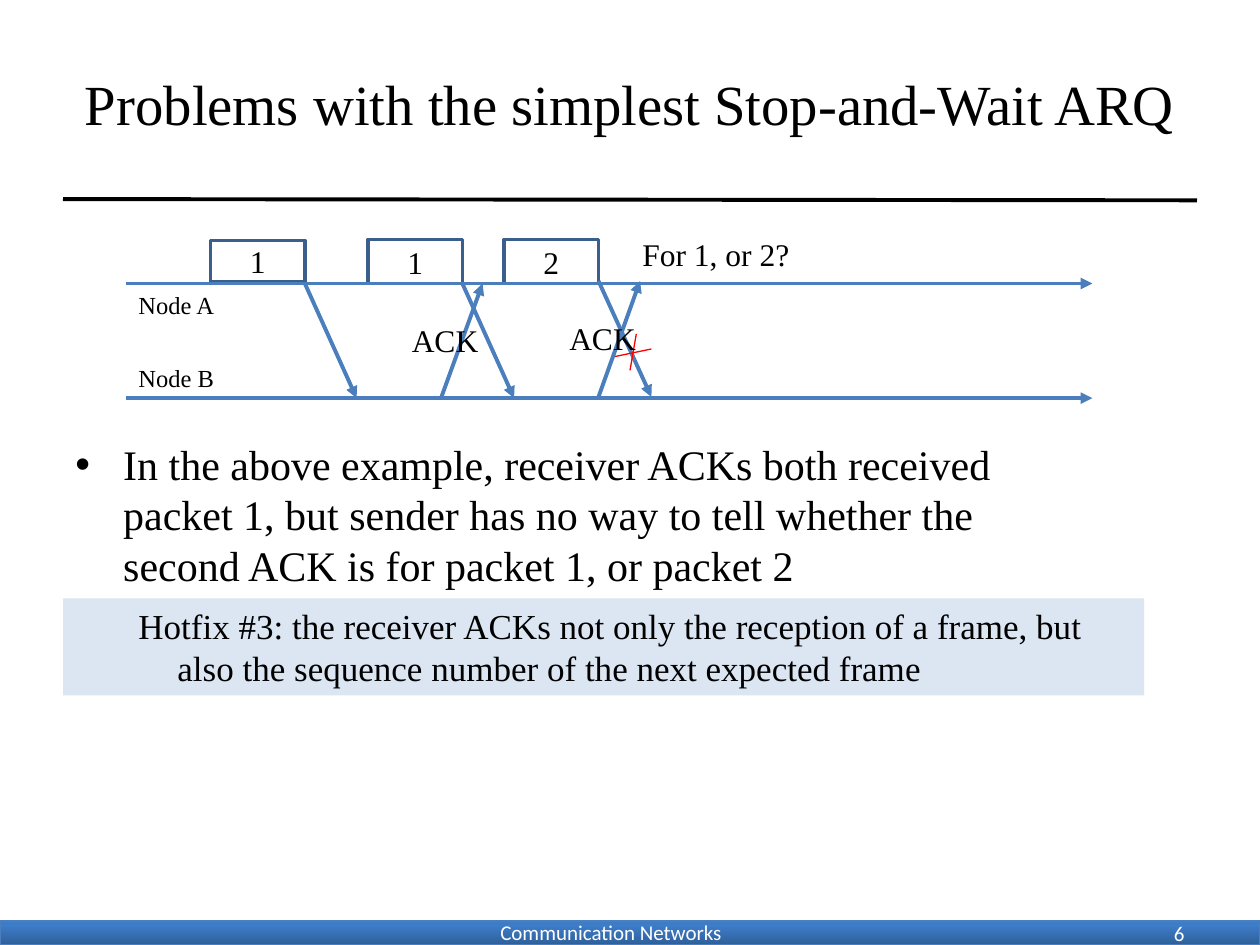
from dataclasses import dataclass
from typing import NamedTuple

from lxml.etree import SubElement
from pptx import Presentation
from pptx.dml.color import RGBColor
from pptx.enum.shapes import MSO_CONNECTOR, MSO_SHAPE
from pptx.enum.text import MSO_ANCHOR, PP_ALIGN
from pptx.oxml.ns import qn
from pptx.util import Inches, Pt


@dataclass(frozen=True)
class Theme:
    black: str = "000000"
    white: str = "FFFFFF"
    red: str = "FF0000"
    blue: str = "4B7EBC"
    frame_border: str = "3A5F8C"
    highlight: str = "DCE6F2"
    bar_dark: str = "2F5F99"
    bar_light: str = "3D7CC7"
    font: str = "Times New Roman"
    footer_font: str = "Calibri"
    title_size: float = 32.4
    body_size: float = 24
    hotfix_size: float = 20
    label_size: float = 18
    node_size: float = 14
    footer_size: float = 12


THEME = Theme()


class Box(NamedTuple):
    left: float
    top: float
    width: float
    height: float


class Frame(NamedTuple):
    number: str
    box: Box


class Label(NamedTuple):
    text: str
    box: Box
    size: float


class Line(NamedTuple):
    start: tuple[float, float]
    end: tuple[float, float]
    color: str = THEME.blue
    width: float = 2.25
    arrow: bool = True


TIME_A, TIME_B = 2.25, 3.16
FRAMES = [
    Frame("1", Box(1.67, 1.91, 0.75, 0.33)),
    Frame("1", Box(2.92, 1.9, 0.75, 0.35)),
    Frame("2", Box(4, 1.9, 0.75, 0.35)),
]
LINES = [
    Line((1, TIME_A), (8.67, TIME_A)),
    Line((1, TIME_B), (8.67, TIME_B)),
    Line((2.42, TIME_A), (2.83, TIME_B)),
    Line((3.5, TIME_B), (3.83, TIME_A)),
    Line((3.67, TIME_A), (4.08, TIME_B)),
    Line((4.75, 2.23), (5.17, 3.15)),
    Line((4.75, 3.15), (5.08, 2.23)),
    Line((5.05, 2.65), (5, 2.94), THEME.red, 0.75, False),
    Line((5.17, 2.77), (4.88, 2.83), THEME.red, 0.75, False),
]
LABELS = [
    Label("Node A", Box(1, 2.25, 0.81, 0.34), THEME.node_size),
    Label("Node B", Box(1, 2.83, 0.81, 0.34), THEME.node_size),
    Label("ACK", Box(3.17, 2.5, 0.73, 0.4), THEME.label_size),
    Label("ACK", Box(4.42, 2.48, 0.73, 0.4), THEME.label_size),
    Label("For 1, or 2?", Box(5, 1.82, 1.38, 0.4), THEME.label_size),
]


def rgb(color: str) -> RGBColor:
    return RGBColor.from_string(color)


def inches(box: Box) -> list[Inches]:
    return [Inches(value) for value in box]


def write(shape, text: str, size: float, color: str = THEME.black, font: str = THEME.font,
          align: PP_ALIGN = PP_ALIGN.LEFT, wrap: bool = True):
    """Set a shape's text in one style and return its paragraph."""
    shape.text_frame.text = text
    shape.text_frame.word_wrap = wrap
    paragraph = shape.text_frame.paragraphs[0]
    paragraph.alignment = align
    for run in paragraph.runs:
        run.font.name = font
        run.font.size = Pt(size)
        run.font.color.rgb = rgb(color)
    return paragraph


def indent(paragraph, margin: float, hanging: float, space_before: float, bullet: str = "") -> None:
    paragraph.space_before = Pt(space_before)
    properties = paragraph._p.get_or_add_pPr()
    properties.set("marL", str(Inches(margin)))
    properties.set("indent", str(Inches(-hanging)))
    if bullet:
        SubElement(properties, qn("a:buFont"), typeface="Arial")
        SubElement(properties, qn("a:buChar"), char=bullet)
    else:
        SubElement(properties, qn("a:buNone"))


def add_rectangle(slide, box: Box):
    shape = slide.shapes.add_shape(MSO_SHAPE.RECTANGLE, *inches(box))
    shape.shadow.inherit = False
    return shape


def add_line(slide, line: Line) -> None:
    points = [Inches(value) for value in (*line.start, *line.end)]
    connector = slide.shapes.add_connector(MSO_CONNECTOR.STRAIGHT, *points)
    connector.line.color.rgb = rgb(line.color)
    connector.line.width = Pt(line.width)
    if line.arrow:
        SubElement(connector.line._get_or_add_ln(), qn("a:tailEnd"), type="triangle")
    SubElement(connector._element.spPr, qn("a:effectLst"))


def add_frame(slide, frame: Frame) -> None:
    shape = add_rectangle(slide, frame.box)
    shape.fill.solid()
    shape.fill.fore_color.rgb = rgb(THEME.white)
    shape.line.color.rgb = rgb(THEME.frame_border)
    shape.line.width = Pt(2)
    write(shape, frame.number, THEME.label_size, align=PP_ALIGN.CENTER)
    shape.text_frame.vertical_anchor = MSO_ANCHOR.MIDDLE


def add_label(slide, label: Label) -> None:
    write(slide.shapes.add_textbox(*inches(label.box)), label.text, label.size, wrap=False)


def add_footer(slide) -> None:
    bar = add_rectangle(slide, Box(0, 7.31, 10, 0.19))
    bar.fill.gradient()
    bar.fill.gradient_angle = 90
    stops = zip(bar.fill.gradient_stops, (THEME.bar_dark, THEME.bar_light), (0, 0.8))
    for stop, color, position in stops:
        stop.color.rgb = rgb(color)
        stop.position = position
    bar.line.color.rgb = rgb(THEME.blue)
    bar.line.width = Pt(0.75)
    for text, box, align in (
        ("Communication Networks", Box(3.7, 7.25, 2.3, 0.3), PP_ALIGN.CENTER),
        ("6", Box(7.17, 7.26, 2.33, 0.2), PP_ALIGN.RIGHT),
    ):
        write(slide.shapes.add_textbox(*inches(box)), text, THEME.footer_size,
              THEME.white, THEME.footer_font, align)


def add_title(slide) -> None:
    title = slide.shapes.title
    title.left, title.top, title.width, title.height = inches(Box(0.5, 0.3, 9, 1.03))
    write(title, "Problems with the simplest Stop-and-Wait ARQ", THEME.title_size,
          align=PP_ALIGN.CENTER)
    title.text_frame.vertical_anchor = MSO_ANCHOR.MIDDLE
    add_line(slide, Line((0.5, 1.58), (9.5, 1.59), THEME.black, arrow=False))


def add_explanation(slide) -> None:
    hotfix = slide.shapes.add_textbox(*inches(Box(0.5, 4.75, 8.58, 0.77)))
    hotfix.fill.solid()
    hotfix.fill.fore_color.rgb = rgb(THEME.highlight)
    paragraph = write(hotfix, "Hotfix #3: the receiver ACKs not only the reception of a frame, "
                      "but also the sequence number of the next expected frame", THEME.hotfix_size)
    indent(paragraph, 0.81, 0.31, 0.2 * THEME.hotfix_size)

    body = slide.shapes.add_textbox(*inches(Box(0.5, 3.43, 8.33, 1.31)))
    paragraph = write(body, "In the above example, receiver ACKs both received packet 1, but sender "
                      "has no way to tell whether the second ACK is for packet 1, or packet 2",
                      THEME.body_size)
    indent(paragraph, 0.38, 0.38, 0.2 * THEME.body_size, "•")


def main() -> None:
    presentation = Presentation()
    presentation.slide_width, presentation.slide_height = Inches(10), Inches(7.5)
    slide = presentation.slides.add_slide(presentation.slide_layouts[5])
    add_footer(slide)
    add_title(slide)
    add_explanation(slide)
    for frame in FRAMES:
        add_frame(slide, frame)
    for line in LINES:
        add_line(slide, line)
    for label in LABELS:
        add_label(slide, label)
    presentation.save("out.pptx")


if __name__ == "__main__":
    main()
